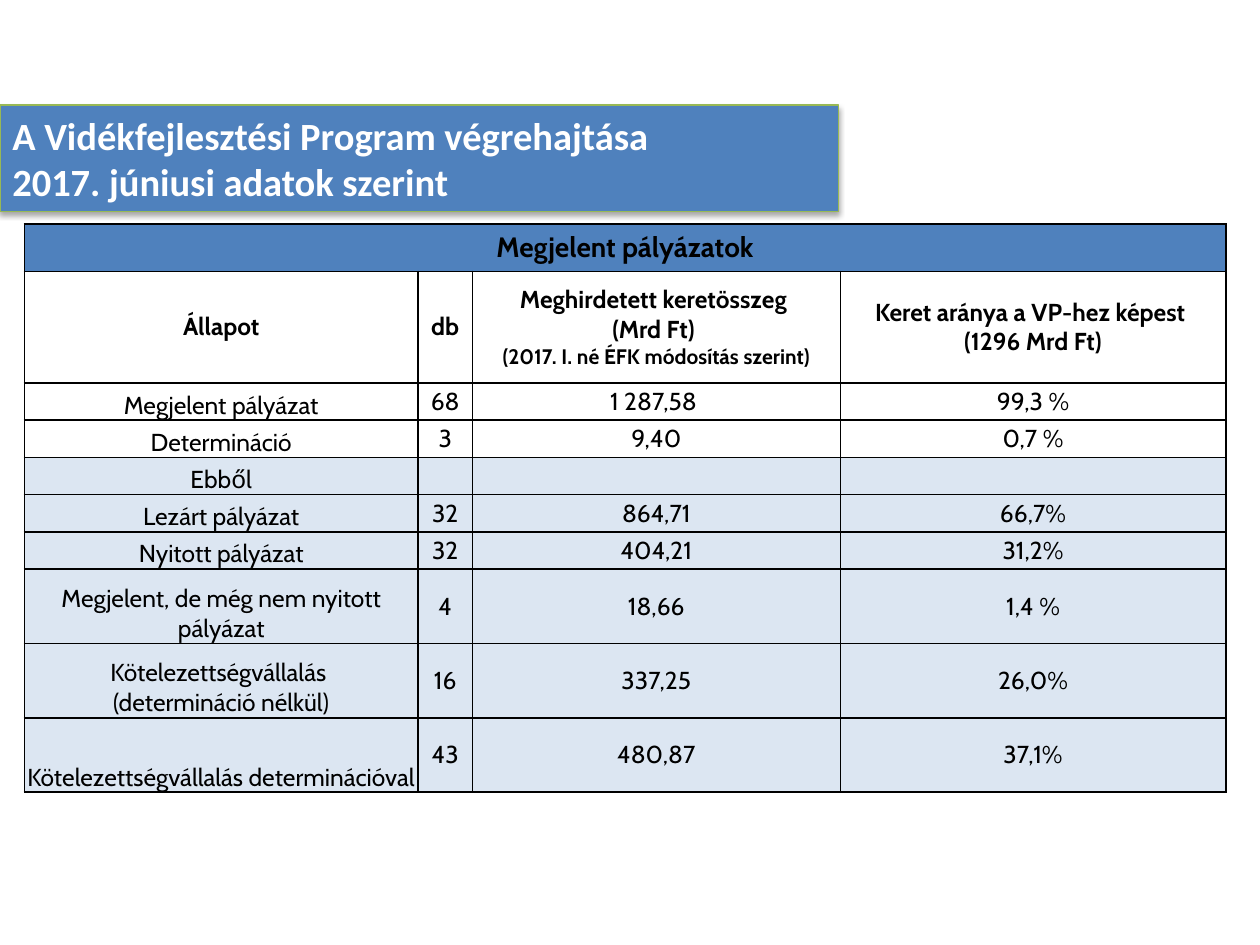
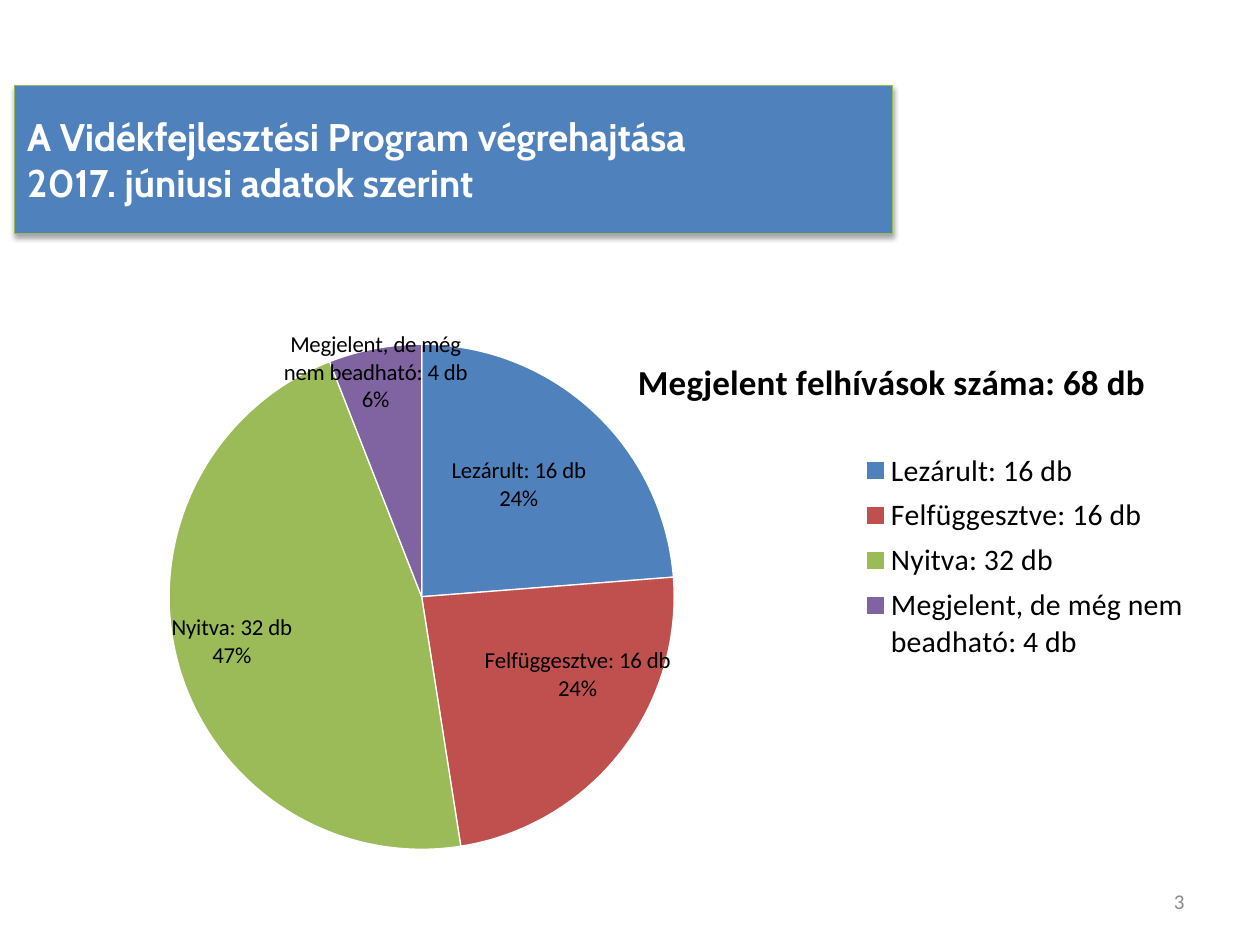
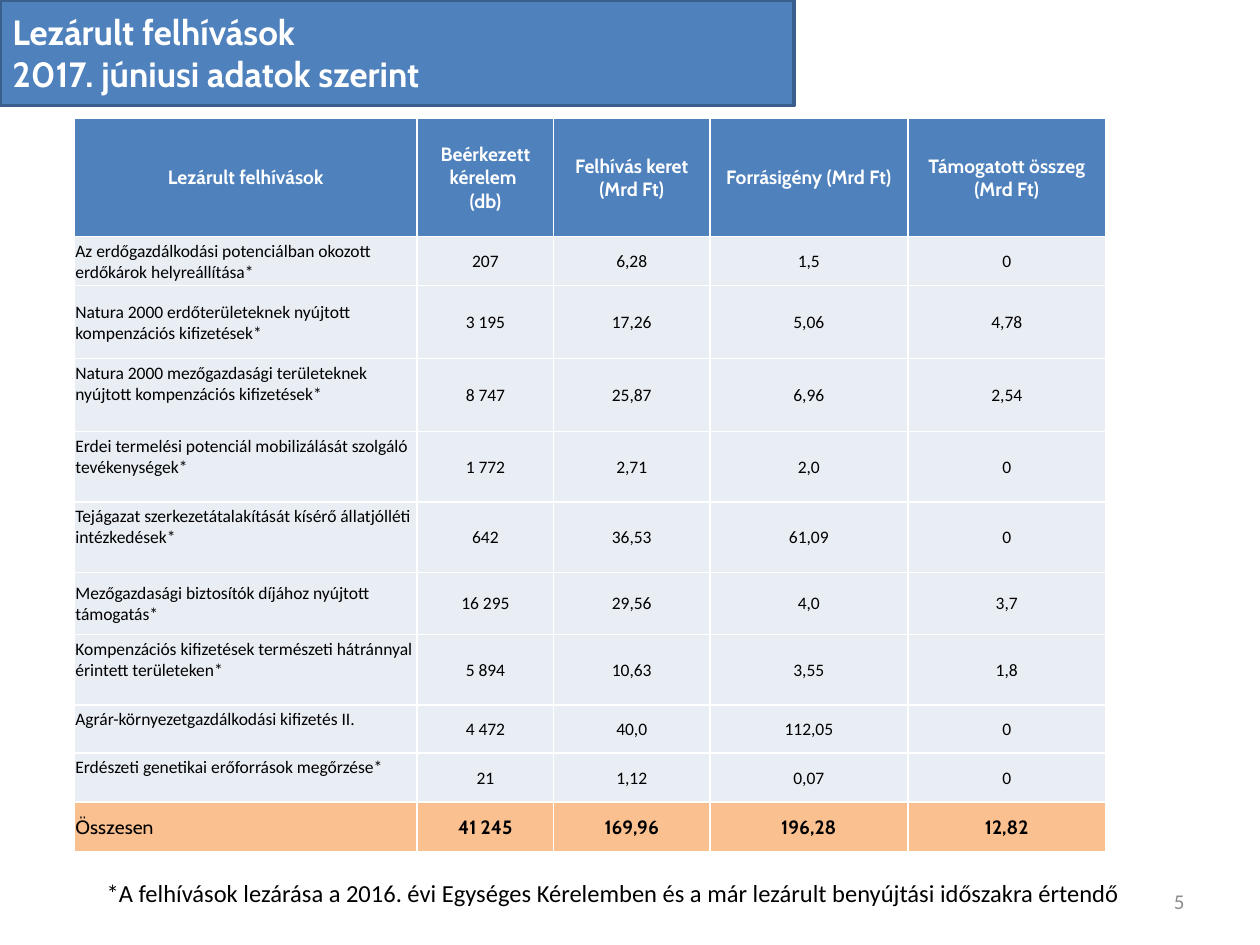
"""Build three slides on the progress of the rural development programme."""
import pptx
import pptx.chart.data
import pptx.dml.color
import pptx.enum.chart
import pptx.enum.shapes
import pptx.enum.text
import pptx.oxml
import pptx.oxml.ns
import pptx.util
from dataclasses import dataclass

Cm, Pt = pptx.util.Cm, pptx.util.Pt
ALIGN, ANCHOR = pptx.enum.text.PP_ALIGN, pptx.enum.text.MSO_ANCHOR


@dataclass(frozen=True)
class Theme:
    head: str = "Cabin"
    body: str = "Calibri"
    blue: str = "4F81BD"
    pale: str = "DCE6F2"
    row: str = "E9EDF4"
    total: str = "FAC090"
    green: str = "98B955"
    navy: str = "3A5F8C"
    grey: str = "8C8C8C"
    black: str = "000000"
    white: str = "FFFFFF"
    slices: tuple = ("4F81BD", "C0504D", "9BBB59", "8064A2")
    band: float = 22
    closed_band: float = 20
    state_title: float = 16
    state: float = 14
    small: float = 12
    closed_head: float = 11
    closed: float = 10
    legend: float = 17
    chart_title: float = 20
    label: float = 13
    footnote: float = 14


T = Theme()

PROGRAMME_TITLE = "A Vidékfejlesztési Program végrehajtása\n2017. júniusi adatok szerint"
CLOSED_TITLE = "Lezárult felhívások\n2017. júniusi adatok szerint"
FOOTNOTE = ("*A felhívások lezárása a 2016. évi Egységes Kérelemben és a már lezárult "
            "benyújtási időszakra értendő")

STATE_COLS = (7.94, 1.09, 7.42, 7.77)
STATE_HEIGHTS = (0.95, 2.25) + (0.75,) * 5 + (1.5,) * 3
STATES = [
    ("Megjelent pályázatok", "", "", ""),
    ("Állapot", "db",
     "Meghirdetett keretösszeg \n(Mrd Ft) \n(2017. I. né ÉFK módosítás szerint)",
     "Keret aránya a VP-hez képest \n(1296 Mrd Ft)"),
    ("Megjelent pályázat", "68", "1 287,58 ", "99,3 %"),
    ("Determináció", "3", "9,40", "0,7 %"),
    ("Ebből", "", "", ""),
    ("Lezárt pályázat", "32", "864,71", "66,7%"),
    ("Nyitott pályázat", "32", "404,21", "31,2%"),
    ("Megjelent, de még nem nyitott pályázat", "4", "18,66", "1,4 %"),
    ("Kötelezettségvállalás \n(determináció nélkül)", "16", "337,25", "26,0%"),
    ("Kötelezettségvállalás determinációval", "43", "480,87", "37,1%"),
]

CALLS_TITLE = "Megjelent felhívások száma: 68 db"
CALLS = [
    ("Lezárult: 16 db", 24, (0.01, -0.03)),
    ("Felfüggesztve: 16 db", 24, (0.05, 0)),
    ("Nyitva: 32 db", 47, (-0.06, 0.02)),
    ("Megjelent, de még nem beadható: 4 db", 6, (-0.02, -0.16)),
]
LABEL_SIZE = (0.19, 0.15)

CLOSED_COLS = (6.91, 2.75, 3.15, 3.99, 3.99)
CLOSED_HEIGHTS = (2.39, 0.99, 1.47, 1.47, 1.42, 1.42, 1.25, 1.42, 0.97, 0.99, 1)
TOP_ROWS = (3, 4, 5, 7, 8, 9)
CLOSED = [
    ("Lezárult felhívások", "Beérkezett kérelem \n(db)", "Felhívás keret\n(Mrd Ft)",
     "Forrásigény (Mrd Ft)", "Támogatott összeg (Mrd Ft)"),
    ("Az erdőgazdálkodási potenciálban okozott erdőkárok helyreállítása*",
     "207", "6,28", "1,5", "0"),
    ("Natura 2000 erdőterületeknek nyújtott kompenzációs kifizetések*",
     "3 195", "17,26", "5,06", "4,78"),
    ("Natura 2000 mezőgazdasági területeknek nyújtott kompenzációs kifizetések*",
     "8 747", "25,87", "6,96", "2,54"),
    ("Erdei termelési potenciál mobilizálását szolgáló tevékenységek*",
     "1 772", "2,71", "2,0", "0"),
    ("Tejágazat szerkezetátalakítását kísérő állatjólléti intézkedések*",
     "642", "36,53", "61,09", "0"),
    ("Mezőgazdasági biztosítók díjához nyújtott támogatás*",
     "16 295", "29,56", "4,0", "3,7"),
    ("Kompenzációs kifizetések természeti hátránnyal érintett területeken*",
     "5 894", "10,63", "3,55", "1,8"),
    ("Agrár-környezetgazdálkodási kifizetés II.", "4 472", "40,0", "112,05", "0"),
    ("Erdészeti genetikai erőforrások megőrzése*", "21", "1,12", "0,07", "0"),
    ("Összesen", "41 245", "169,96", "196,28", "12,82"),
]


def rgb(color):
    return pptx.dml.color.RGBColor.from_string(color)


def xml(tag, attrs="", inner=""):
    ns = pptx.oxml.ns.nsdecls(tag.split(":")[0])
    return pptx.oxml.parse_xml(f"<{tag} {ns} {attrs}>{inner}</{tag}>")


def style_font(font, name, size, color, bold=False):
    font.name, font.size, font.bold = name, Pt(size), bold
    font.color.rgb = rgb(color)


def write(tf, text, name, size, color, bold=False, align=ALIGN.LEFT):
    tf.text = text
    for p in tf.paragraphs:
        p.alignment = align
        for r in p.runs:
            style_font(r.font, name, size, color, bold)
        if not p.runs:
            p._p.append(xml("a:endParaRPr", f'sz="{size * 100}"'))


def add_text(s, box, text, size, color, align=ALIGN.LEFT):
    tf = s.shapes.add_textbox(*map(Cm, box)).text_frame
    tf.word_wrap = True
    tf.vertical_anchor = ANCHOR.MIDDLE
    write(tf, text, T.body, size, color, align=align)


def add_band(s, box, text, name, size, line, width, shadow=True):
    sp = s.shapes.add_shape(pptx.enum.shapes.MSO_SHAPE.RECTANGLE, *map(Cm, box))
    sp.shadow.inherit = False
    sp.fill.solid()
    sp.fill.fore_color.rgb = rgb(T.blue)
    sp.line.color.rgb = rgb(line)
    sp.line.width = Pt(width)
    if shadow:
        effects = sp._element.spPr.find(pptx.oxml.ns.qn("a:effectLst"))
        effects.append(xml(
            "a:outerShdw",
            f'blurRad="{Pt(3.1)}" dist="{Pt(1.8)}" dir="5400000" rotWithShape="0"',
            f'<a:srgbClr val="{T.black}"><a:alpha val="35000"/></a:srgbClr>'))
    tf = sp.text_frame
    tf.word_wrap = True
    tf.vertical_anchor = ANCHOR.MIDDLE
    write(tf, text, name, size, T.white, True)


def add_page_number(s, number):
    add_text(s, (18.2, 17.66, 5.93, 1.01), number, T.small, T.grey, ALIGN.RIGHT)


def add_grid(s, left, top, cols, heights, rows, border, style):
    frame = s.shapes.add_table(len(rows), len(cols), Cm(left), Cm(top),
                               Cm(sum(cols)), Cm(sum(heights)))
    table = frame.table
    table.horz_banding = False
    for col, width in zip(table.columns, cols):
        col.width = Cm(width)
    for i, (row, height) in enumerate(zip(rows, heights)):
        table.rows[i].height = Cm(height)
        for j, text in enumerate(row):
            cell = table.cell(i, j)
            fill, anchor, side_margin, margin, font = style(i, j)
            cell.margin_left = cell.margin_right = Cm(side_margin)
            cell.margin_top, cell.margin_bottom = Cm(margin), 0
            cell.vertical_anchor = anchor
            write(cell.text_frame, text, *font)
            for side in "LRTB":
                cell._tc.get_or_add_tcPr().append(xml(
                    f"a:ln{side}", f'w="{Pt(1)}"',
                    f'<a:solidFill><a:srgbClr val="{border}"/></a:solidFill>'))
            if fill:
                cell.fill.solid()
                cell.fill.fore_color.rgb = rgb(fill)
            else:
                cell.fill.background()
    return table


def state_style(i, j):
    fill = T.blue if i == 0 else T.pale if i > 3 else None
    anchor = ANCHOR.BOTTOM if i > 1 and j == 0 else ANCHOR.MIDDLE
    size = T.state if i else T.state_title
    return fill, anchor, 0, 0, (T.head, size, T.black, i < 2, ALIGN.CENTER)


def closed_style(i, j):
    align = ALIGN.LEFT if i and j == 0 else ALIGN.CENTER
    fill, anchor, margin = T.row, ANCHOR.MIDDLE, 0.02
    font = (T.body, T.closed, T.black, False, align)
    if i == 0:
        fill, font = T.blue, (T.head, T.closed_head, T.white, True, align)
    elif i == len(CLOSED) - 1:
        fill, font = T.total, (T.head, T.closed_head, T.black, j > 0, align)
    elif j == 0 and i in TOP_ROWS:
        anchor, margin = ANCHOR.TOP, 0.08
    return fill, anchor, 0.02, margin, font


def set_layout(parent, index, x, y, w=None, h=None, inner=False, edge=True):
    for old in parent.findall(pptx.oxml.ns.qn("c:layout")):
        parent.remove(old)
    parts = '<c:layoutTarget val="inner"/>' if inner else ""
    if edge:
        parts += '<c:xMode val="edge"/><c:yMode val="edge"/>'
    for key, value in zip("xywh", (x, y, w, h)):
        if value is not None:
            parts += f'<c:{key} val="{value}"/>'
    parent.insert(index, xml("c:layout", "", f"<c:manualLayout>{parts}</c:manualLayout>"))


def set_label_size(label, w, h):
    label.append(xml("c:extLst", "", (
        '<c:ext uri="{CE6537A1-D6FC-4f65-9D91-7224C49458BB}" '
        'xmlns:c15="http://schemas.microsoft.com/office/drawing/2012/chart">'
        f'<c15:layout><c:manualLayout><c:w val="{w}"/><c:h val="{h}"/>'
        '</c:manualLayout></c15:layout></c:ext>')))


def add_pie(s):
    data = pptx.chart.data.CategoryChartData()
    data.categories = [name for name, _, _ in CALLS]
    data.add_series(CALLS_TITLE, [value for _, value, _ in CALLS])
    chart = s.shapes.add_chart(pptx.enum.chart.XL_CHART_TYPE.PIE,
                               Cm(1.3), Cm(4.93), Cm(22.86), Cm(12.57), data).chart
    style_font(chart.font, T.body, T.legend, T.black)
    chart.has_title = True
    write(chart.chart_title.text_frame, CALLS_TITLE, T.body, T.chart_title,
          T.black, True, ALIGN.CENTER)
    chart.has_legend = True
    chart.legend.position = pptx.enum.chart.XL_LEGEND_POSITION.RIGHT
    chart.legend.include_in_layout = False
    style_font(chart.legend.font, T.body, T.legend, T.black)
    plot = chart.plots[0]
    plot.vary_by_categories = True
    for i, color in enumerate(T.slices):
        point = plot.series[0].points[i]
        point.format.fill.solid()
        point.format.fill.fore_color.rgb = rgb(color)
        point.format.line.color.rgb = rgb(T.white)
        point.format.line.width = Pt(0.75)
        style_font(point.data_label.font, T.body, T.label, T.black)
        point.data_label.position = pptx.enum.chart.XL_LABEL_POSITION.CENTER
    root = chart._chartSpace
    shown = {"showVal": 0, "showCatName": 1, "showPercent": 1, "showLeaderLines": 0}
    for tag, value in shown.items():
        for el in root.xpath(f".//c:ser//c:{tag}"):
            el.set("val", str(value))
    for el in root.xpath(".//c:ser//c:showBubbleSize"):
        el.addnext(xml("c:separator", "", "\n"))
    for label, (_, _, offset) in zip(root.xpath(".//c:dLbl"), CALLS):
        set_layout(label, 1, *offset, edge=False)
        set_label_size(label, *LABEL_SIZE)
    set_layout(root.xpath("c:chart/c:title")[0], 1, 0.5, 0.17)
    set_layout(root.xpath(".//c:legend")[0], 1, 0.71, 0.32, 0.29, 0.36)
    set_layout(root.xpath(".//c:plotArea")[0], 0, 0.09, 0.16, 0.45, 0.81, inner=True)


def main():
    prs = pptx.Presentation()
    prs.slide_width, prs.slide_height = Cm(25.4), Cm(19.05)
    states, calls, closed = (prs.slides.add_slide(prs.slide_layouts[6]) for _ in range(3))

    table = add_grid(states, 0.49, 4.52, STATE_COLS, STATE_HEIGHTS, STATES,
                     T.black, state_style)
    table.cell(0, 0).merge(table.cell(0, 3))
    table.cell(1, 2).text_frame.paragraphs[2].runs[0].font.size = Pt(T.small)
    add_band(states, (0, 2.12, 16.9, 2.14), PROGRAMME_TITLE, T.body, T.band, T.green, 0.75)

    add_page_number(calls, "3")
    add_band(calls, (0.3, 1.72, 17.7, 2.99), PROGRAMME_TITLE, T.head, T.band, T.green, 0.75)
    add_pie(calls)

    add_page_number(closed, "5")
    add_band(closed, (0, 0, 16.01, 2.13), CLOSED_TITLE, T.head, T.closed_band, T.navy, 2,
             shadow=False)
    add_grid(closed, 1.5, 2.38, CLOSED_COLS, CLOSED_HEIGHTS, CLOSED, T.white, closed_style)
    add_text(closed, (1.9, 17.56, 21, 0.86), FOOTNOTE, T.footnote, T.black)

    prs.save("out.pptx")


if __name__ == "__main__":
    main()
